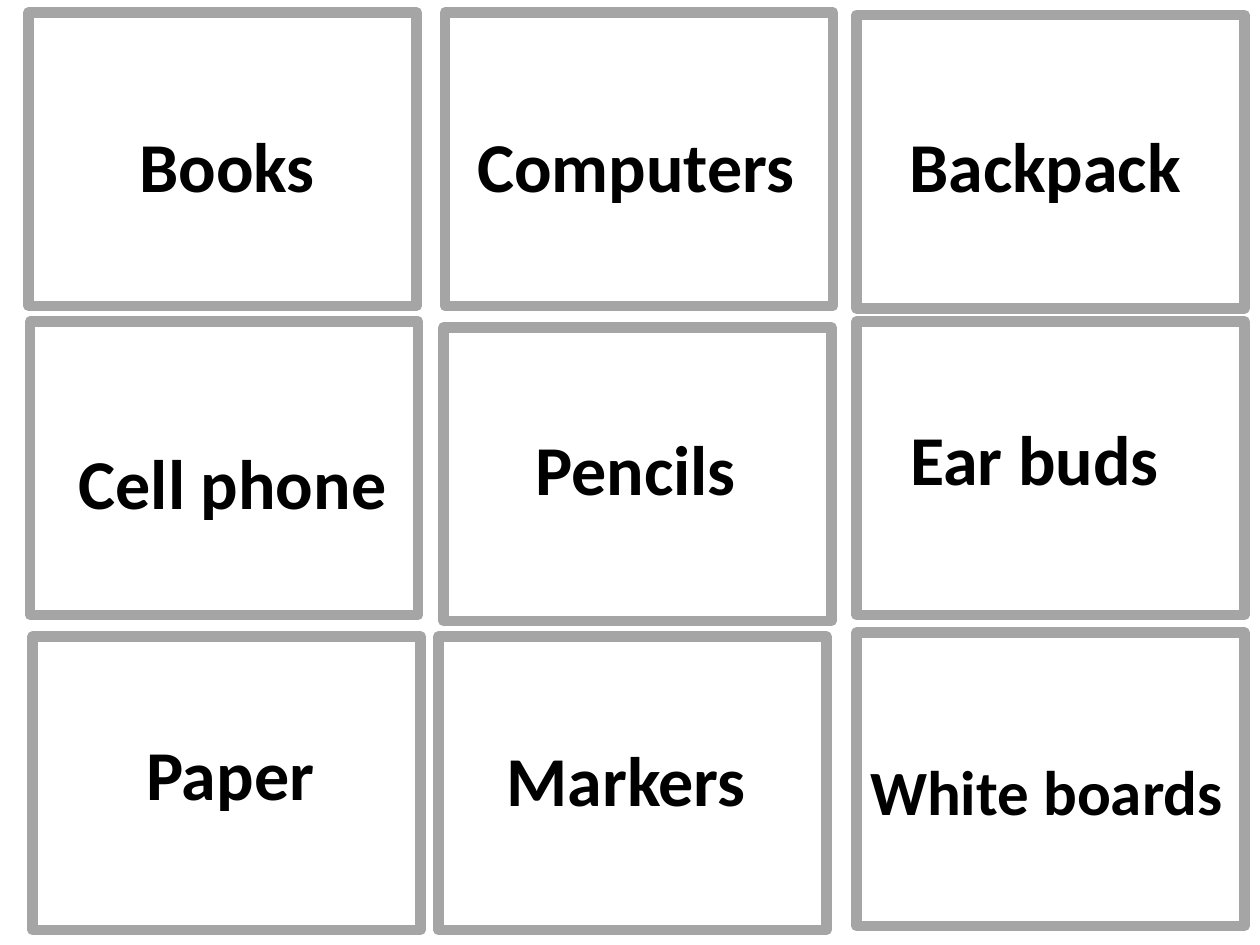
"""Build a slide of nine framed word cards for classroom supplies."""
import pptx
import pptx.dml.color
import pptx.enum.shapes
import pptx.enum.text
import pptx.util
from pptx.util import Cm

WHITE = pptx.dml.color.RGBColor(0xFF, 0xFF, 0xFF)
GRAY = pptx.dml.color.RGBColor(0xA5, 0xA5, 0xA5)
BLACK = pptx.dml.color.RGBColor(0x00, 0x00, 0x00)

FONT = "Calibri"
CARD_WIDTH, CARD_HEIGHT = 7.82, 5.92
LABEL_HEIGHT_PER_POINT = 0.049

# (word, font size, card (left, top), label (left, top, width))
CARDS = [
    ("Books", 40, (0.58, 0.25), (0.64, 2.34, 7.87)),
    ("Computers", 40, (8.97, 0.25), (8.94, 2.34, 7.75)),
    ("Backpack", 40, (17.27, 0.3), (17.3, 2.34, 7.54)),
    ("Cell phone", 40, (0.61, 6.48), (0.79, 8.74, 7.8)),
    ("Pencils", 40, (8.94, 6.6), (8.94, 8.46, 7.75)),
    ("Ear buds", 40, (17.27, 6.48), (17.12, 8.26, 7.47)),
    ("Paper", 40, (0.66, 12.83), (0.79, 14.61, 7.7)),
    ("Markers", 40, (8.84, 12.83), (8.84, 14.73, 7.57)),
    ("White boards", 36, (17.27, 12.75), (17.27, 15.04, 7.65)),
]


def add_card(slide, left, top):
    shape = slide.shapes.add_shape(
        pptx.enum.shapes.MSO_SHAPE.RECTANGLE,
        Cm(left), Cm(top), Cm(CARD_WIDTH), Cm(CARD_HEIGHT))
    shape.shadow.inherit = False
    shape.fill.solid()
    shape.fill.fore_color.rgb = WHITE
    shape.line.color.rgb = GRAY
    shape.line.width = pptx.util.Pt(6)


def add_label(slide, word, size, left, top, width):
    height = size * LABEL_HEIGHT_PER_POINT
    text_box = slide.shapes.add_textbox(Cm(left), Cm(top), Cm(width), Cm(height))
    text_frame = text_box.text_frame
    text_frame.word_wrap = True
    text_frame.auto_size = pptx.enum.text.MSO_AUTO_SIZE.SHAPE_TO_FIT_TEXT
    text_frame.text = word
    paragraph = text_frame.paragraphs[0]
    paragraph.alignment = pptx.enum.text.PP_ALIGN.CENTER
    font = paragraph.runs[0].font
    font.name = FONT
    font.size = pptx.util.Pt(size)
    font.bold = True
    font.color.rgb = BLACK


def main():
    presentation = pptx.Presentation()
    presentation.slide_width, presentation.slide_height = Cm(25.4), Cm(19.05)
    slide = presentation.slides.add_slide(presentation.slide_layouts[6])
    for word, size, card, label in CARDS:
        add_card(slide, *card)
    for word, size, card, label in CARDS:
        add_label(slide, word, size, *label)
    presentation.save("out.pptx")


if __name__ == "__main__":
    main()
